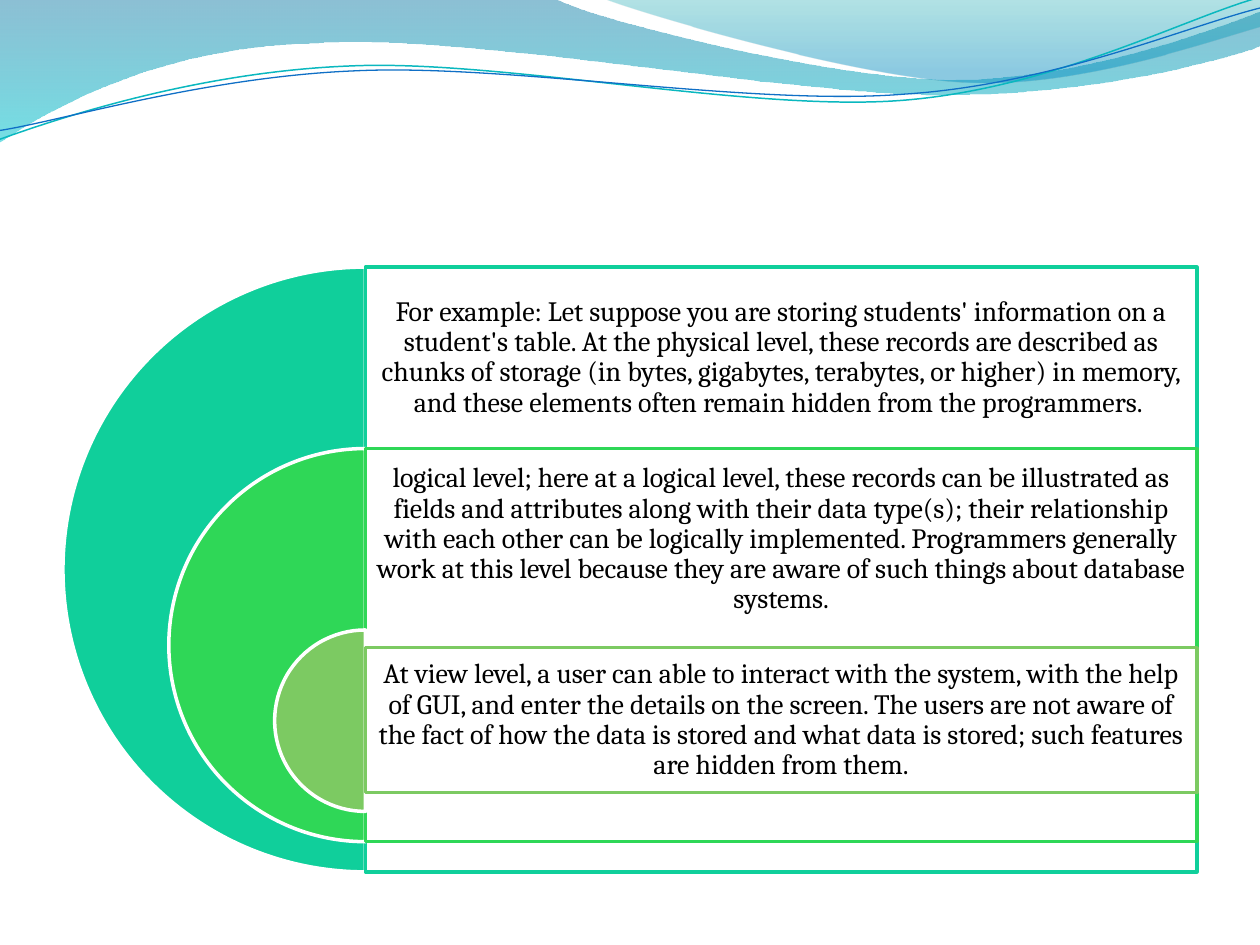
from lxml.etree import SubElement
from pptx import Presentation
from pptx.dml.color import RGBColor
from pptx.enum.shapes import MSO_SHAPE
from pptx.enum.text import MSO_ANCHOR, PP_ALIGN
from pptx.oxml.ns import qn
from pptx.util import Inches, Pt

color = RGBColor.from_string


def draw_curve(parent, start, segments, closed):
    corners = [(Inches(x), Inches(y)) for segment in segments
               for x, y in zip(segment[::2], segment[1::2])]
    builder = parent.shapes.build_freeform(Inches(start[0]), Inches(start[1]))
    builder.add_line_segments(corners, close=closed)
    shape = builder.convert_to_shape()
    shape.shadow.inherit = False
    edges = iter(shape.element.xpath(".//a:lnTo"))
    for segment in segments:
        edge = next(edges)
        if len(segment) == 6:
            bend = SubElement(edge.getparent(), qn("a:cubicBezTo"))
            edge.addprevious(bend)
            for piece in (edge, next(edges), next(edges)):
                bend.append(piece[0])
                piece.getparent().remove(piece)
    return shape


def set_opacity(shape, percents):
    for node, percent in zip(shape.element.xpath("./p:spPr//a:srgbClr"), percents):
        SubElement(node, qn("a:alpha")).set("val", str(percent * 1000))


deck = Presentation()
deck.slide_width = Inches(10)
deck.slide_height = Inches(7.5)
page = deck.slides.add_slide(deck.slide_layouts[6])

waves = [
    ((0, 0), [(4.4, -0.01), (4.76, 0.17, 6.64, 0.63, 7.58, 0.63),
              (8.53, 0.63, 9.58, 0.26, 10, 0.09), (10.01, 0.36),
              (9.83, 0.44, 8.7, 0.76, 7.46, 0.75),
              (6.22, 0.75, 3.82, 0.28, 2.57, 0.34),
              (1.29, 0.36, 0.46, 0.83, -0.01, 1.13)],
     [(0, "0074A1"), (1, "00C6CF")], (45, 55)),
    ((4.79, -0.01), [(5.09, 0.11, 6.82, 0.62, 7.69, 0.65),
                     (8.56, 0.69, 9.61, 0.32, 10, 0.21), (10, 0)],
     [(0, "00A1A9"), (0.8, "008BBF")], (30, 45)),
]
for start, segments, stops, opacities in waves:
    wave = draw_curve(page, start, segments, True)
    wave.fill.gradient()
    wave.fill.gradient_angle = 270
    for stop, (position, shade) in zip(wave.fill.gradient_stops, stops):
        stop.position = position
        stop.color.rgb = color(shade)
    set_opacity(wave, opacities)
    wave.line.fill.background()

strands = [
    ((-0.02, 0.87), [(0.47, 0.72, 1.58, 0.41, 2.78, 0.42),
                     (3.96, 0.42, 5.91, 0.93, 7.12, 0.9),
                     (8.32, 0.87, 9.4, 0.36, 10, 0.22)], "0AB8BF", 0.85),
    ((-0.02, 0.8), [(0.46, 0.75, 1.64, 0.45, 2.83, 0.46),
                    (4.03, 0.46, 5.96, 0.89, 7.16, 0.85),
                    (8.35, 0.83, 9.42, 0.42, 10.02, 0.3)], "0F6FC6", 0.75),
]
strand_group = page.shapes.add_group_shape()
for start, segments, shade, width in strands:
    strand = draw_curve(strand_group, start, segments, False)
    strand.rotation = 357.3
    strand.fill.background()
    strand.line.color.rgb = color(shade)
    strand.line.width = Pt(width)

levels = [
    ("10CF9B", 2.12, 4.8, 1.44,
     "For example: Let suppose you are storing students' information on a student's table. "
     "At the physical level, these records are described as chunks of storage (in bytes, "
     "gigabytes, terabytes, or higher) in memory, and these elements often remain hidden "
     "from the programmers. "),
    ("2FD757", 3.56, 3.12, 1.44,
     "logical level; here at a logical level, these records can be illustrated as fields and "
     "attributes along with their data type(s); their relationship with each other can be "
     "logically implemented. Programmers generally work at this level because they are aware "
     "of such things about database systems."),
    ("7CCA62", 5.14, 1.15, 1.15,
     "At view level, a user can able to interact with the system, with the help of GUI, and "
     "enter the details on the screen. The users are not aware of the fact of how the data is "
     "stored and what data is stored; such features are hidden from them."),
]
panel_left, panel_width = 2.9, 6.6
level_group = page.shapes.add_group_shape()
for index, (shade, top, panel_height, text_height, words) in enumerate(levels):
    diameter = 4.8 - 1.68 * index
    pie = level_group.shapes.add_shape(
        MSO_SHAPE.PIE, Inches(panel_left - diameter / 2), Inches(2.12 + 1.44 * index),
        Inches(diameter), Inches(diameter))
    pie.adjustments[0] = 54
    pie.adjustments[1] = 162
    panel = level_group.shapes.add_shape(
        MSO_SHAPE.RECTANGLE, Inches(panel_left), Inches(top),
        Inches(panel_width), Inches(panel_height))
    for shape, fill, line in ((pie, shade, "FFFFFF"), (panel, "FFFFFF", shade)):
        shape.shadow.inherit = False
        shape.fill.solid()
        shape.fill.fore_color.rgb = color(fill)
        if shape is panel:
            set_opacity(panel, [90])
        shape.line.color.rgb = color(line)
        shape.line.width = Pt(2)

    box = level_group.shapes.add_textbox(
        Inches(panel_left), Inches(top), Inches(panel_width), Inches(text_height))
    frame = box.text_frame
    frame.word_wrap = True
    frame.vertical_anchor = MSO_ANCHOR.MIDDLE
    frame.margin_left = frame.margin_right = Inches(0.07)
    frame.margin_top = frame.margin_bottom = Inches(0.07)
    para = frame.paragraphs[0]
    para.alignment = PP_ALIGN.CENTER
    para.line_spacing = 0.9
    span = para.add_run()
    span.text = words
    span.font.name = "Cambria"
    span.font.size = Pt(16)
    span.font.color.rgb = color("000000")

deck.save("out.pptx")
